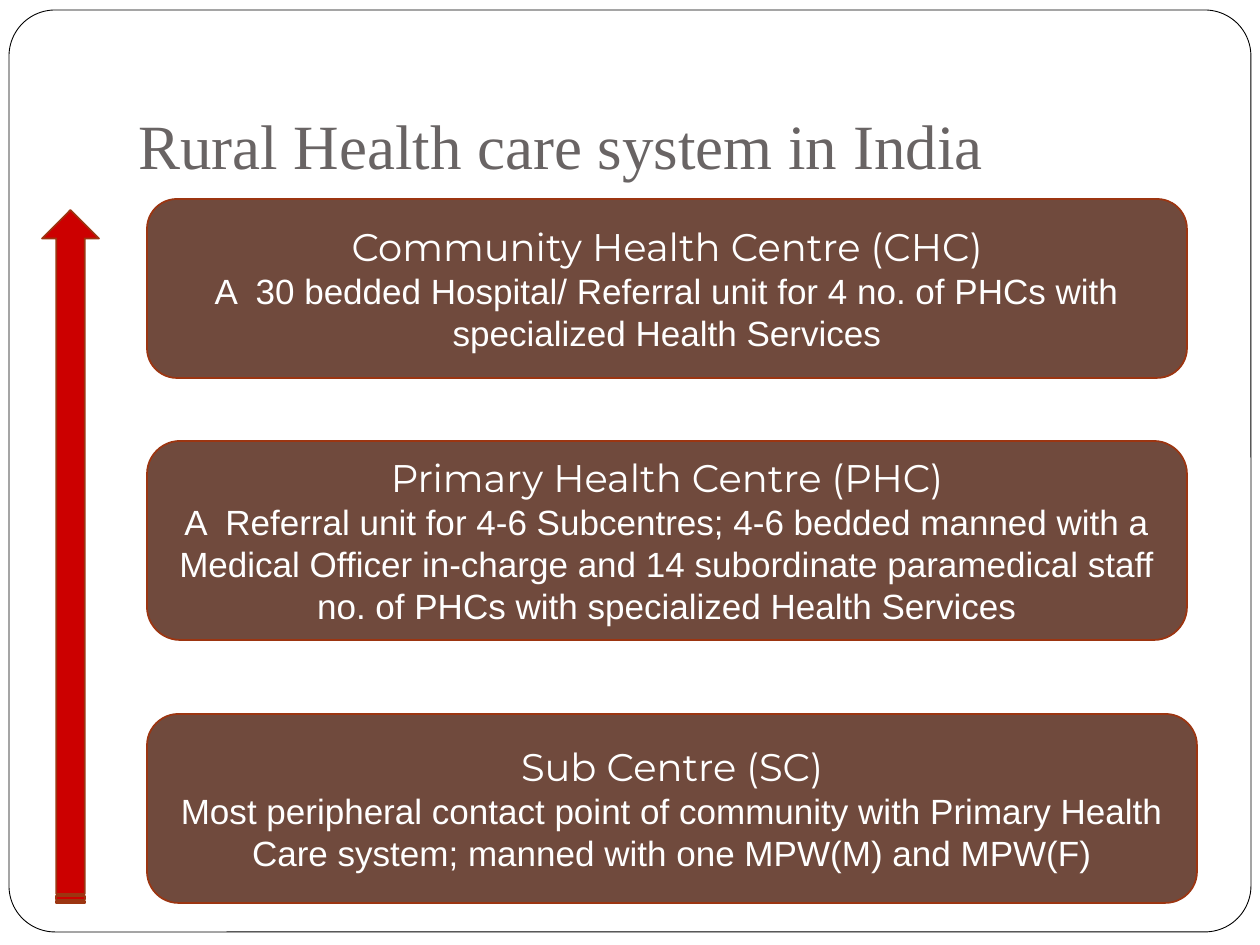
from pptx import Presentation
from pptx.dml.color import RGBColor
from pptx.enum.shapes import MSO_SHAPE
from pptx.enum.text import MSO_ANCHOR, PP_ALIGN
from pptx.util import Emu, Pt

ROUNDED = MSO_SHAPE.ROUNDED_RECTANGLE
STRIPED_ARROW = MSO_SHAPE.STRIPED_RIGHT_ARROW
MIDDLE, BOTTOM = MSO_ANCHOR.MIDDLE, MSO_ANCHOR.BOTTOM
CENTER = PP_ALIGN.CENTER

WHITE = RGBColor(0xFF, 0xFF, 0xFF)
BLACK = RGBColor(0x00, 0x00, 0x00)
GREY = RGBColor(0x69, 0x64, 0x64)
BROWN = RGBColor(0x70, 0x4A, 0x3D)
RUST = RGBColor(0x9C, 0x35, 0x11)
RED = RGBColor(0xCC, 0x00, 0x00)

EMU_PER_PX = 914400 / 126
CARD_LEFT = 147


def px(*lengths):
    return [Emu(round(length * EMU_PER_PX)) for length in lengths]


def add_shape(kind, box, fill, line, line_width):
    shape = slide.shapes.add_shape(kind, *px(*box))
    shape.shadow.inherit = False
    shape.fill.solid()
    shape.fill.fore_color.rgb = fill
    shape.line.color.rgb = line
    shape.line.width = Pt(line_width)
    return shape


presentation = Presentation()
presentation.slide_width, presentation.slide_height = px(1260, 945)
slide = presentation.slides.add_slide(presentation.slide_layouts[6])

# Frame
frame = add_shape(ROUNDED, (9, 10, 1242, 922), WHITE, BLACK, 0.5)
frame.adjustments[0] = 0.05

# Title
title = slide.shapes.add_textbox(*px(126, 38, 1071, 157)).text_frame
title.word_wrap = True
title.vertical_anchor = BOTTOM
title.margin_bottom = Pt(7.2)
run = title.paragraphs[0].add_run()
run.text = "Rural Health care system in India"
run.font.size = Pt(36)
run.font.name = "Times New Roman"
run.font.color.rgb = GREY

# Levels of care: top, width, height, name, description
levels = [
    (199, 1040, 179, "Community Health Centre (CHC)",
     "A  30 bedded Hospital/ Referral unit for 4 no. of PHCs with "
     "specialized Health Services"),
    (441, 1040, 199, "Primary Health Centre (PHC)",
     "A  Referral unit for 4-6 Subcentres; 4-6 bedded manned with a "
     "Medical Officer in-charge and 14 subordinate paramedical staff "
     "no. of PHCs with specialized Health Services"),
    (714, 1050, 189, "Sub Centre (SC)",
     "Most peripheral contact point of community with Primary Health "
     "Care system; manned with one MPW(M) and MPW(F)"),
]
for top, width, height, name, description in levels:
    card = add_shape(ROUNDED, (CARD_LEFT, top, width, height), BROWN, RUST, 1)
    text_frame = card.text_frame
    text_frame.word_wrap = True
    text_frame.vertical_anchor = MIDDLE
    heading, body = text_frame.paragraphs[0], text_frame.add_paragraph()
    for paragraph, text, size, font in (
        (heading, name, 22, "Montserrat"),
        (body, description, 20, "Arial"),
    ):
        paragraph.alignment = CENTER
        run = paragraph.add_run()
        run.text = text
        run.font.size = Pt(size)
        run.font.name = font
        run.font.color.rgb = WHITE

# Upward referral arrow: a right arrow turned a quarter to the left
arrow = add_shape(STRIPED_ARROW, (-276, 528, 693, 57), RED, RUST, 1)
arrow.rotation = 270

presentation.save("out.pptx")
